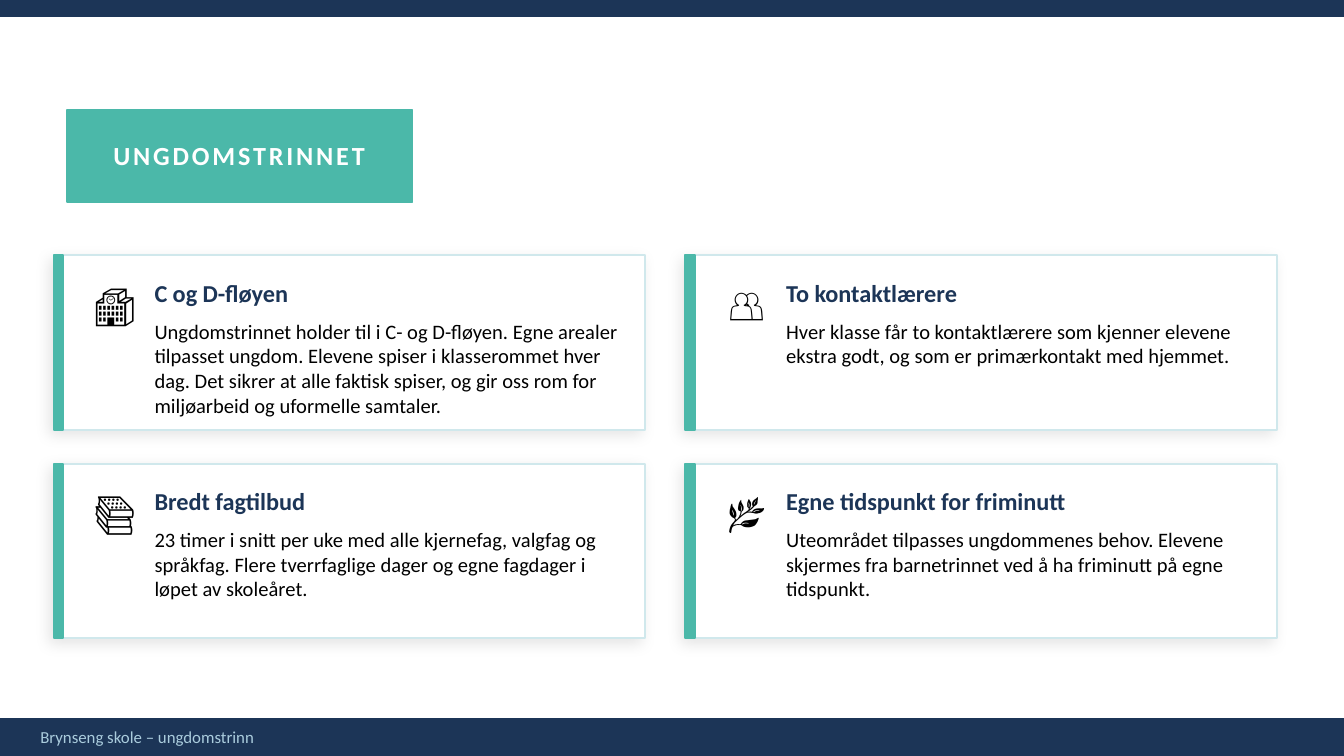
from pptx import Presentation
from pptx.dml.color import RGBColor
from pptx.enum.shapes import MSO_SHAPE
from pptx.enum.text import MSO_ANCHOR as Anchor, PP_ALIGN as Align
from pptx.oxml import parse_xml
from pptx.oxml.ns import nsdecls, qn
from pptx.util import Pt

NAVY = RGBColor(0x1C, 0x35, 0x57)
TEAL = RGBColor(0x4B, 0xB8, 0xA9)
PALE_BLUE = RGBColor(0xD0, 0xE8, 0xEC)
FOOTER_BLUE = RGBColor(0xAA, 0xCC, 0xDD)
WHITE = RGBColor(0xFF, 0xFF, 0xFF)
BLACK = RGBColor(0, 0, 0)

SLIDE_WIDTH, SLIDE_HEIGHT = 720, 405
CARD_LEFT, CARD_TOP = 28.8, 136.8
CARD_WIDTH, CARD_HEIGHT = 316.8, 93.6
COLUMN_GAP, ROW_GAP = 21.6, 18

CARDS = [
    ("🏫", "C og D-fløyen",
     "Ungdomstrinnet holder til i C- og D-fløyen. Egne arealer tilpasset ungdom. "
     "Elevene spiser i klasserommet hver dag. Det sikrer at alle faktisk spiser, "
     "og gir oss rom for miljøarbeid og uformelle samtaler."),
    ("👥", "To kontaktlærere",
     "Hver klasse får to kontaktlærere som kjenner elevene ekstra godt, "
     "og som er primærkontakt med hjemmet."),
    ("📚", "Bredt fagtilbud",
     "23 timer i snitt per uke med alle kjernefag, valgfag og språkfag. "
     "Flere tverrfaglige dager og egne fagdager i løpet av skoleåret."),
    ("🌿", "Egne tidspunkt for friminutt",
     "Uteområdet tilpasses ungdommenes behov. Elevene skjermes fra barnetrinnet "
     "ved å ha friminutt på egne tidspunkt."),
]


class SlideBuilder:
    font_name = "Calibri"
    line_width = 1

    def __init__(self, slide):
        self.slide = slide

    def box(self, left, top, width, height, fill, line=None, shadow=False):
        shape = self.slide.shapes.add_shape(
            MSO_SHAPE.RECTANGLE, Pt(left), Pt(top), Pt(width), Pt(height))
        shape.shadow.inherit = False
        shape.fill.solid()
        shape.fill.fore_color.rgb = fill
        shape.line.color.rgb = line or fill
        shape.line.width = Pt(self.line_width)
        if shadow:
            self.add_shadow(shape)

    def add_shadow(self, shape, blur=8, distance=3, degrees=135, opacity=10):
        effects = shape._element.spPr.find(qn("a:effectLst"))
        effects.append(parse_xml(
            f'<a:outerShdw {nsdecls("a")} blurRad="{Pt(blur)}" dist="{Pt(distance)}" '
            f'dir="{degrees * 60000}" algn="bl" rotWithShape="0">'
            f'<a:srgbClr val="{BLACK}"><a:alpha val="{opacity * 1000}"/></a:srgbClr>'
            '</a:outerShdw>'))

    def text(self, left, top, width, height, words, size, color, bold=False,
             align=Align.LEFT, anchor=Anchor.MIDDLE, spacing=None):
        shape = self.slide.shapes.add_textbox(Pt(left), Pt(top), Pt(width), Pt(height))
        frame = shape.text_frame
        frame.word_wrap = True
        frame.vertical_anchor = anchor
        frame.margin_left = frame.margin_right = 0
        frame.margin_top = frame.margin_bottom = 0
        paragraph = frame.paragraphs[0]
        paragraph.alignment = align
        run = paragraph.add_run()
        run.text = words
        run.font.name = self.font_name
        run.font.size = Pt(size)
        run.font.bold = bold
        run.font.color.rgb = color
        if spacing:
            run._r.get_or_add_rPr().set("spc", str(int(spacing * 100)))

    def card(self, left, top, icon, heading, body):
        self.box(left, top, CARD_WIDTH, CARD_HEIGHT, WHITE, PALE_BLUE, shadow=True)
        self.box(left, top, 5.04, CARD_HEIGHT, TEAL)
        self.text(left + 12.96, top + 5.76, 39.6, 39.6, icon, 22, BLACK,
                  align=Align.CENTER)
        self.text(left + 54, top + 7.2, 252, 25.2, heading, 13, NAVY, bold=True)
        self.text(left + 54, top + 33.84, 252, 54, body, 11, BLACK, anchor=Anchor.TOP)


def main():
    presentation = Presentation()
    presentation.slide_width = Pt(SLIDE_WIDTH)
    presentation.slide_height = Pt(SLIDE_HEIGHT)
    builder = SlideBuilder(presentation.slides.add_slide(presentation.slide_layouts[6]))

    builder.box(0, 0, SLIDE_WIDTH, 8.64, NAVY)
    builder.box(0, 385.2, SLIDE_WIDTH, 19.8, NAVY)
    builder.text(21.6, 386.28, 676.8, 17.28, "Brynseng skole – ungdomstrinn", 9, FOOTER_BLUE)

    builder.box(36, 59.04, 185.04, 49.32, TEAL)
    builder.text(54.72, 73.08, 146.88, 20.16, "UNGDOMSTRINNET", 14, WHITE, bold=True,
                 align=Align.CENTER, spacing=1.5)

    for index, (icon, heading, body) in enumerate(CARDS):
        row, column = divmod(index, 2)
        builder.card(CARD_LEFT + column * (CARD_WIDTH + COLUMN_GAP),
                     CARD_TOP + row * (CARD_HEIGHT + ROW_GAP), icon, heading, body)

    presentation.save("out.pptx")


if __name__ == "__main__":
    main()
